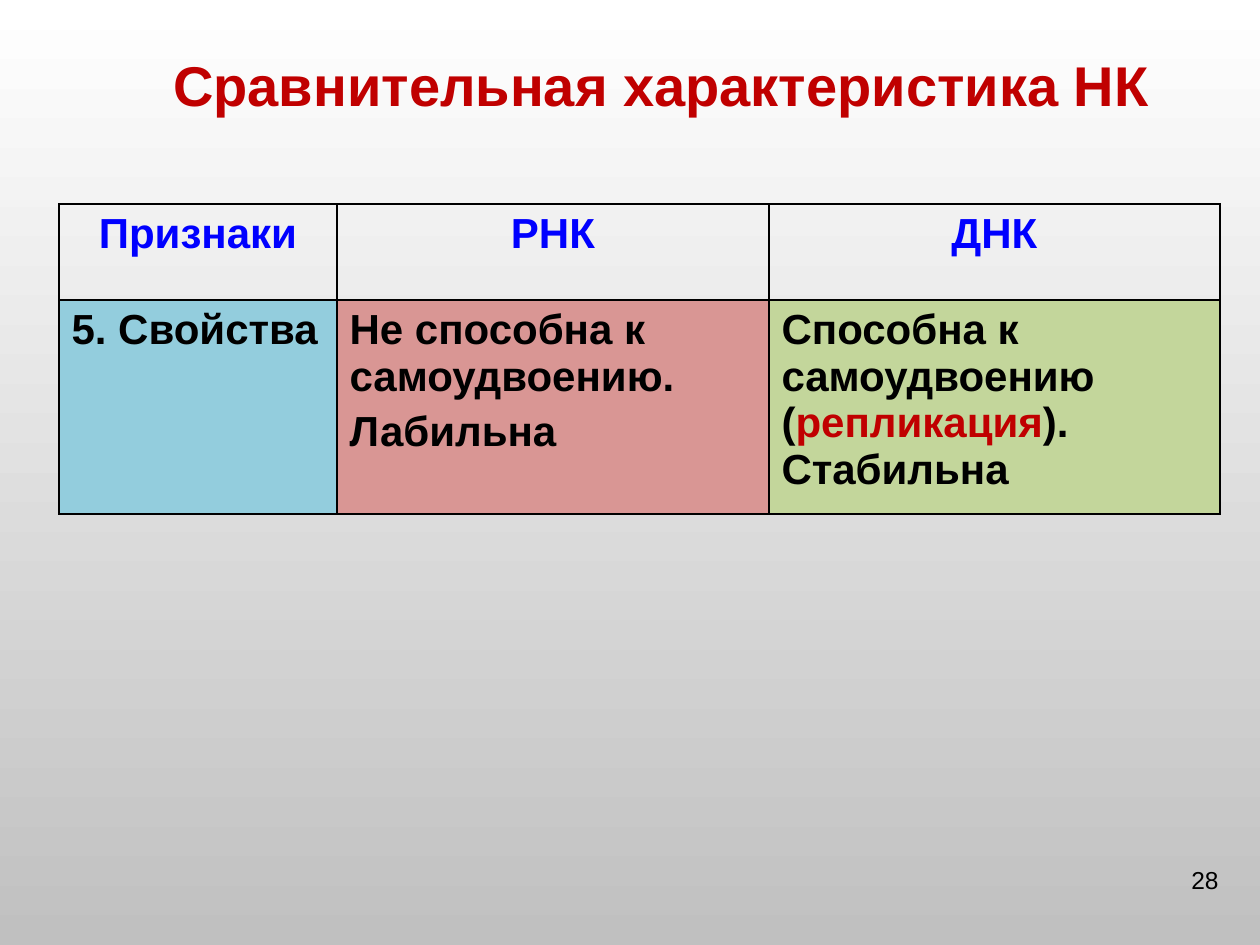
from dataclasses import dataclass
from typing import Optional

from lxml.etree import SubElement
from pptx import Presentation
from pptx.dml.color import RGBColor
from pptx.enum.text import MSO_ANCHOR, PP_ALIGN
from pptx.oxml.ns import qn
from pptx.util import Emu, Pt

EMU_PER_PX = 914400 / 126
FONT = "Arial"
BLACK, RED, BLUE = "000000", "C00000", "0000FF"


@dataclass(frozen=True)
class Span:
    text: str
    color: str = BLACK


@dataclass(frozen=True)
class CellSpec:
    paragraphs: tuple[tuple[Span, ...], ...]
    fill: Optional[str] = None
    align: PP_ALIGN = PP_ALIGN.LEFT


def px(length: int) -> Emu:
    return Emu(round(length * EMU_PER_PX))


def rgb(value: str) -> RGBColor:
    return RGBColor.from_string(value)


def write(frame, paragraphs, size: int, bold: bool, align: PP_ALIGN) -> None:
    frame.word_wrap = True
    frame.text = "\n".join("".join(span.text for span in spans) for spans in paragraphs)
    for index, (paragraph, spans) in enumerate(zip(frame.paragraphs, paragraphs)):
        paragraph.alignment = align
        if index:
            paragraph.space_before = Pt(size * 0.2)
        paragraph.runs[0].text = spans[0].text
        for span in spans[1:]:
            paragraph.add_run().text = span.text
        for run, span in zip(paragraph.runs, spans):
            run.font.name = FONT
            run.font.size = Pt(size)
            run.font.bold = bold
            run.font.color.rgb = rgb(span.color)


def add_label(page, bounds: tuple[int, ...], span: Span, size: int, bold: bool,
              align: PP_ALIGN, anchor: MSO_ANCHOR) -> None:
    box = page.shapes.add_textbox(*map(px, bounds))
    box.text_frame.vertical_anchor = anchor
    write(box.text_frame, ((span,),), size, bold, align)


def add_borders(cell) -> None:
    properties = cell._tc.get_or_add_tcPr()
    for side in ("a:lnL", "a:lnR", "a:lnT", "a:lnB"):
        line = SubElement(properties, qn(side), w=str(Pt(1)))
        solid = SubElement(line, qn("a:solidFill"))
        SubElement(solid, qn("a:srgbClr"), val=BLACK)


def fill_cell(cell, content: CellSpec) -> None:
    add_borders(cell)
    if content.fill:
        cell.fill.solid()
        cell.fill.fore_color.rgb = rgb(content.fill)
    else:
        cell.fill.background()
    write(cell.text_frame, content.paragraphs, 24, True, content.align)


def add_comparison(page, left: int, top: int, widths: tuple[int, ...],
                   heights: tuple[int, ...], rows: tuple[tuple[CellSpec, ...], ...]) -> None:
    table = page.shapes.add_table(len(heights), len(widths), px(left), px(top),
                                  px(sum(widths)), px(sum(heights))).table
    table.first_row = False
    table.horz_banding = False
    for column, width in zip(table.columns, widths):
        column.width = px(width)
    for row, height, contents in zip(table.rows, heights, rows):
        row.height = px(height)
        for cell, content in zip(row.cells, contents):
            fill_cell(cell, content)


def paint_background(page) -> None:
    fill = page.background.fill
    fill.gradient()
    fill.gradient_angle = 270
    for stop, position, color in zip(fill.gradient_stops, (0, 1), ("FFFFFF", "C0C0C0")):
        stop.position = position
        stop.color.rgb = rgb(color)


HEADER = tuple(
    CellSpec(((Span(name, BLUE),),), align=PP_ALIGN.CENTER)
    for name in ("Признаки", "РНК", "ДНК")
)
PROPERTIES = (
    CellSpec(((Span("5. Свойства"),),), "93CDDD"),
    CellSpec(((Span("Не способна к самоудвоению."),), (Span("Лабильна"),)), "D99694"),
    CellSpec(((Span("Способна к самоудвоению ("), Span("репликация", RED),
               Span("). Стабильна")),), "C3D69B"),
)


def main() -> None:
    deck = Presentation()
    deck.slide_width, deck.slide_height = px(1260), px(945)
    page = deck.slides.add_slide(deck.slide_layouts[6])
    paint_background(page)
    add_label(page, (937, 859, 294, 66), Span("28"), 14, False,
              PP_ALIGN.RIGHT, MSO_ANCHOR.TOP)
    add_label(page, (126, 36, 1071, 96), Span("Сравнительная характеристика НК", RED),
              32, True, PP_ALIGN.CENTER, MSO_ANCHOR.MIDDLE)
    add_comparison(page, 59, 204, (278, 432, 451), (96, 200), (HEADER, PROPERTIES))
    deck.save("out.pptx")


if __name__ == "__main__":
    main()
